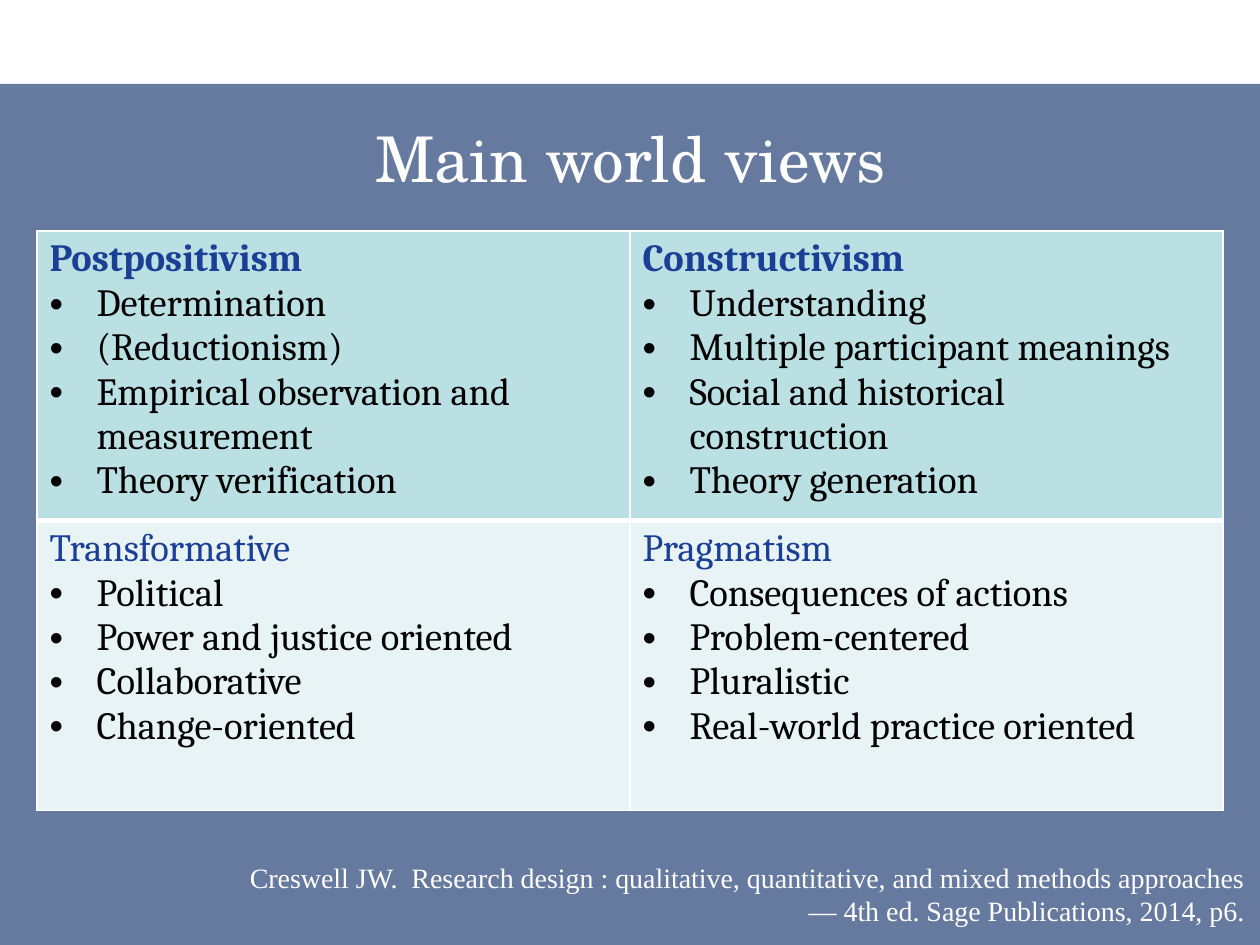
import pptx
import pptx.dml.color
import pptx.enum.shapes
import pptx.enum.text
import pptx.oxml
import pptx.oxml.ns
import pptx.util
from lxml import etree

PX = 914400 // 126
WHITE = "FFFFFF"
NAMESPACE = pptx.oxml.ns.nsdecls("a")


def color(code):
    return pptx.dml.color.RGBColor.from_string(code)


def style(para, font, size, code, bold=False):
    for span in para.runs:
        span.font.name = font
        span.font.size = pptx.util.Pt(size)
        span.font.color.rgb = color(code)
        span.font.bold = bold


deck = pptx.Presentation()
deck.slide_width = 1260 * PX
deck.slide_height = 945 * PX
page = deck.slides.add_slide(deck.slide_layouts[6])

# Translucent navy panel below the white header strip
panel = page.shapes.add_shape(
    pptx.enum.shapes.MSO_SHAPE.RECTANGLE, 0, 84 * PX, 1260 * PX, 861 * PX)
panel.shadow.inherit = False
panel.fill.solid()
panel.fill.fore_color.rgb = color("002060")
panel.line.fill.background()
navy = panel._element.spPr.find(".//" + pptx.oxml.ns.qn("a:srgbClr"))
etree.SubElement(navy, pptx.oxml.ns.qn("a:alpha"), val="60000")

# Title and citation
align = pptx.enum.text.PP_ALIGN
anchor = pptx.enum.text.MSO_ANCHOR
captions = [
    ("Main world views", (32, 105, 1197, 105),
     "TeX Gyre Schola", 36, align.CENTER, anchor.MIDDLE),
    ("Creswell JW.  Research design : qualitative, quantitative, and mixed "
     "methods approaches— 4th ed. Sage Publications, 2014, p6.",
     (218, 854, 1039, 81), "Times New Roman", 16, align.RIGHT, anchor.TOP),
]
for text, bounds, font, size, alignment, vertical in captions:
    box = page.shapes.add_textbox(*[value * PX for value in bounds])
    box.text_frame.word_wrap = True
    box.text_frame.vertical_anchor = vertical
    box.text_frame.text = text
    para = box.text_frame.paragraphs[0]
    para.alignment = alignment
    style(para, font, size, WHITE)

# Two-by-two grid of world views
views = [
    [("Postpositivism", "Determination", "(Reductionism)",
      "Empirical observation and measurement", "Theory verification"),
     ("Constructivism", "Understanding", "Multiple participant meanings",
      "Social and historical construction", "Theory generation")],
    [("Transformative", "Political", "Power and justice oriented",
      "Collaborative", "Change-oriented"),
     ("Pragmatism", "Consequences of actions", "Problem-centered",
      "Pluralistic", "Real-world practice oriented")],
]
row_heights = [279, 290]
row_fills = ["BBE0E3", "E7F3F4"]
row_borders = [
    {"lnL": 1, "lnR": 1, "lnT": 1, "lnB": 3},
    {"lnL": 1, "lnR": 1, "lnT": 3, "lnB": 1},
]
table = page.shapes.add_table(
    2, 2, 37 * PX, 231 * PX, 1186 * PX, sum(row_heights) * PX).table
for column in table.columns:
    column.width = 593 * PX

for row, row_views in enumerate(views):
    table.rows[row].height = row_heights[row] * PX
    for col, lines in enumerate(row_views):
        cell = table.cell(row, col)
        cell.fill.solid()
        cell.fill.fore_color.rgb = color(row_fills[row])
        properties = cell._tc.get_or_add_tcPr()
        for place, (side, width) in enumerate(row_borders[row].items()):
            properties.insert(place, pptx.oxml.parse_xml(
                f'<a:{side} {NAMESPACE} w="{pptx.util.Pt(width)}"><a:solidFill>'
                f'<a:srgbClr val="{WHITE}"/></a:solidFill></a:{side}>'))

        cell.text_frame.text = "\n".join(lines)
        heading, *points = cell.text_frame.paragraphs
        style(heading, "Cambria", 22, "1C3F96", bold=row == 0)
        for para in points:
            bullet = para._p.get_or_add_pPr()
            bullet.set("marL", str(47 * PX))
            bullet.set("indent", str(-47 * PX))
            etree.SubElement(bullet, pptx.oxml.ns.qn("a:buFont"), typeface="Arial")
            etree.SubElement(bullet, pptx.oxml.ns.qn("a:buChar"), char="•")
            style(para, "Cambria", 22, "000000")

deck.save("out.pptx")
